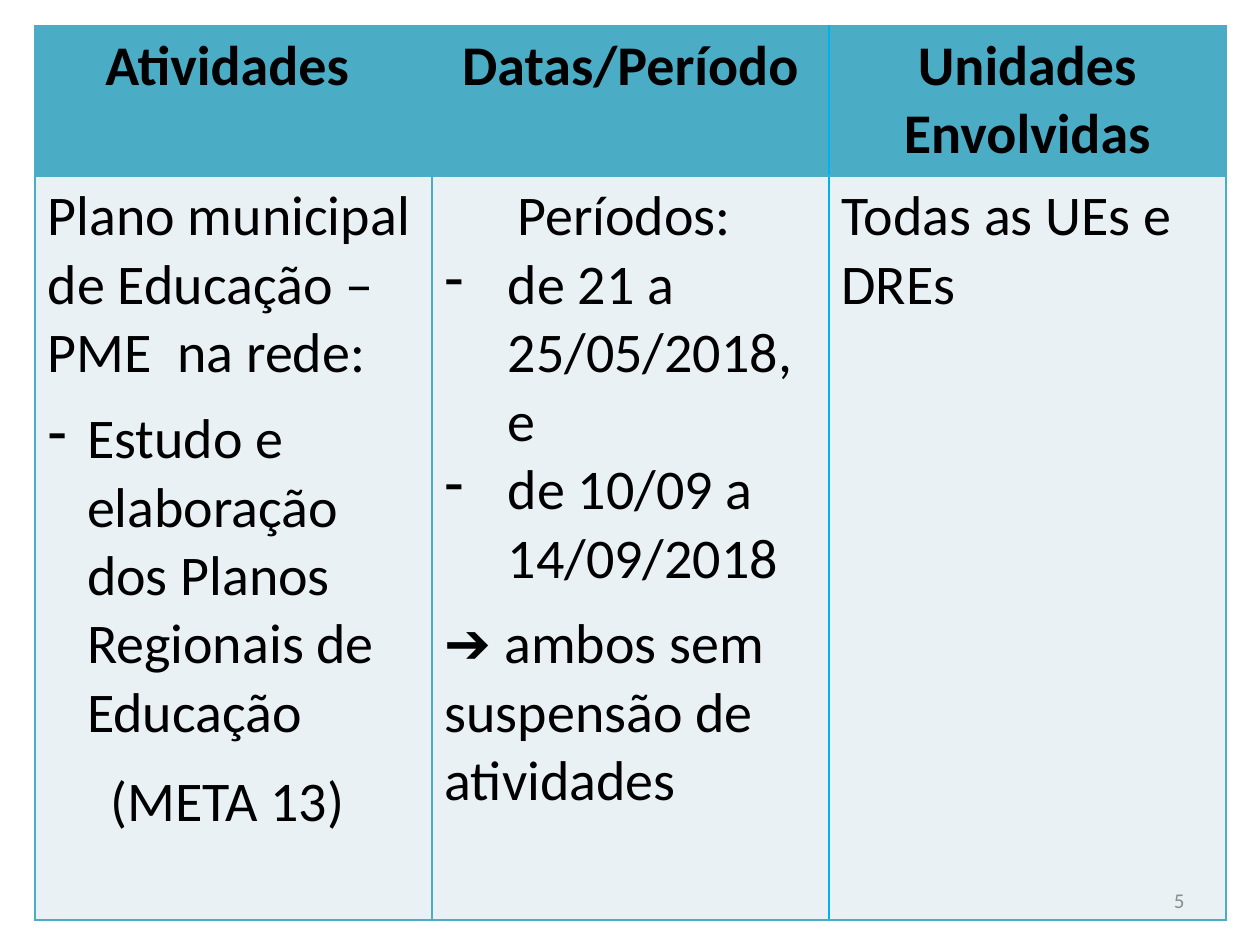
"""Build a slide with a table of activities, dates and units involved."""
from lxml import etree
from pptx import Presentation
from pptx.dml.color import RGBColor
from pptx.enum.text import MSO_ANCHOR, PP_ALIGN
from pptx.oxml.ns import qn
from pptx.util import Cm, Pt

LEFT, CENTER, RIGHT = PP_ALIGN.LEFT, PP_ALIGN.CENTER, PP_ALIGN.RIGHT
MIDDLE = MSO_ANCHOR.MIDDLE
BLANK_LAYOUT = 6
FONT = "Calibri"
COLORS = {
    "header": "4BACC6",
    "body": "E9F1F5",
    "border": "4BACC6",
    "divider": "00B0F0",
    "text": "000000",
    "number": "8C8C8C",
}

HEADERS = ["Atividades ", "Datas/Período", "Unidades Envolvidas"]
ACTIVITIES = [
    ("Plano municipal de Educação – PME  na rede:", {}),
    ("Estudo e elaboração dos Planos Regionais de Educação",
     {"indent": 0.79, "before": 10}),
    ("(META 13) ", {"align": CENTER, "before": 12}),
]
DATES = [
    ("Períodos: ", {"align": CENTER}),
    ("de 21 a 25/05/2018, e", {"indent": 1.27}),
    ("de 10/09 a 14/09/2018", {"indent": 1.27}),
    ("➔ ambos sem suspensão de atividades", {"before": 10}),
]
UNITS = [("Todas as UEs e DREs", {})]
ROWS = [
    [[(header, {"bold": True, "align": CENTER})] for header in HEADERS],
    [ACTIVITIES, DATES, UNITS],
]
ROW_HEIGHTS = [3.03, 15]
ROW_FILLS = ["header", "body"]
COLUMN_WIDTH = 8
TABLE_LEFT, TABLE_TOP = 0.71, 0.52
SLIDE_NUMBER = "5"


def write(paragraph, text, size=32, color="text", bold=False, align=LEFT,
          before=0, indent=0):
    """Fill a paragraph; a positive indent in cm makes it a dashed item."""
    paragraph.alignment = align
    paragraph.space_before = Pt(before)
    run = paragraph.add_run()
    run.text = text
    run.font.name = FONT
    run.font.size = Pt(size)
    run.font.bold = bold
    run.font.color.rgb = RGBColor.from_string(COLORS[color])
    if indent:
        properties = paragraph._p.get_or_add_pPr()
        properties.set("marL", str(Cm(indent)))
        properties.set("indent", str(-Cm(indent)))
        etree.SubElement(properties, qn("a:buFontTx"))
        etree.SubElement(properties, qn("a:buChar"), char="-")


def set_borders(cell, colors):
    """Draw the left, right, top and bottom borders of a cell."""
    properties = cell._tc.get_or_add_tcPr()
    for position, (side, color) in enumerate(zip("LRTB", colors)):
        line = etree.Element(qn(f"a:ln{side}"), w=str(Pt(1)))
        fill = etree.SubElement(line, qn("a:solidFill"))
        etree.SubElement(fill, qn("a:srgbClr"), val=COLORS[color])
        properties.insert(position, line)


def add_schedule(slide):
    """Add the table and fill its cells."""
    columns = len(HEADERS)
    table = slide.shapes.add_table(
        len(ROWS), columns, Cm(TABLE_LEFT), Cm(TABLE_TOP),
        Cm(COLUMN_WIDTH * columns), Cm(sum(ROW_HEIGHTS))).table
    table.horz_banding = False
    for column in table.columns:
        column.width = Cm(COLUMN_WIDTH)
    for row_index, contents in enumerate(ROWS):
        table.rows[row_index].height = Cm(ROW_HEIGHTS[row_index])
        for column_index, content in enumerate(contents):
            cell = table.cell(row_index, column_index)
            cell.fill.solid()
            cell.fill.fore_color.rgb = RGBColor.from_string(
                COLORS[ROW_FILLS[row_index]])
            left = "divider" if column_index == 2 else "border"
            right = "divider" if column_index == 1 else "border"
            set_borders(cell, (left, right, "border", "border"))
            frame = cell.text_frame
            for index, (text, style) in enumerate(content):
                paragraph = frame.add_paragraph() if index else frame.paragraphs[0]
                write(paragraph, text, **style)


def add_slide_number(slide):
    """Add the slide number at the lower right."""
    shape = slide.shapes.add_textbox(Cm(18.2), Cm(17.65), Cm(5.93), Cm(1.01))
    frame = shape.text_frame
    frame.word_wrap = True
    frame.vertical_anchor = MIDDLE
    write(frame.paragraphs[0], SLIDE_NUMBER, size=12, color="number", align=RIGHT)


def main():
    """Create and save the presentation."""
    presentation = Presentation()
    presentation.slide_width, presentation.slide_height = Cm(25.4), Cm(19.05)
    slide = presentation.slides.add_slide(presentation.slide_layouts[BLANK_LAYOUT])
    add_schedule(slide)
    add_slide_number(slide)
    presentation.save("out.pptx")


if __name__ == "__main__":
    main()
